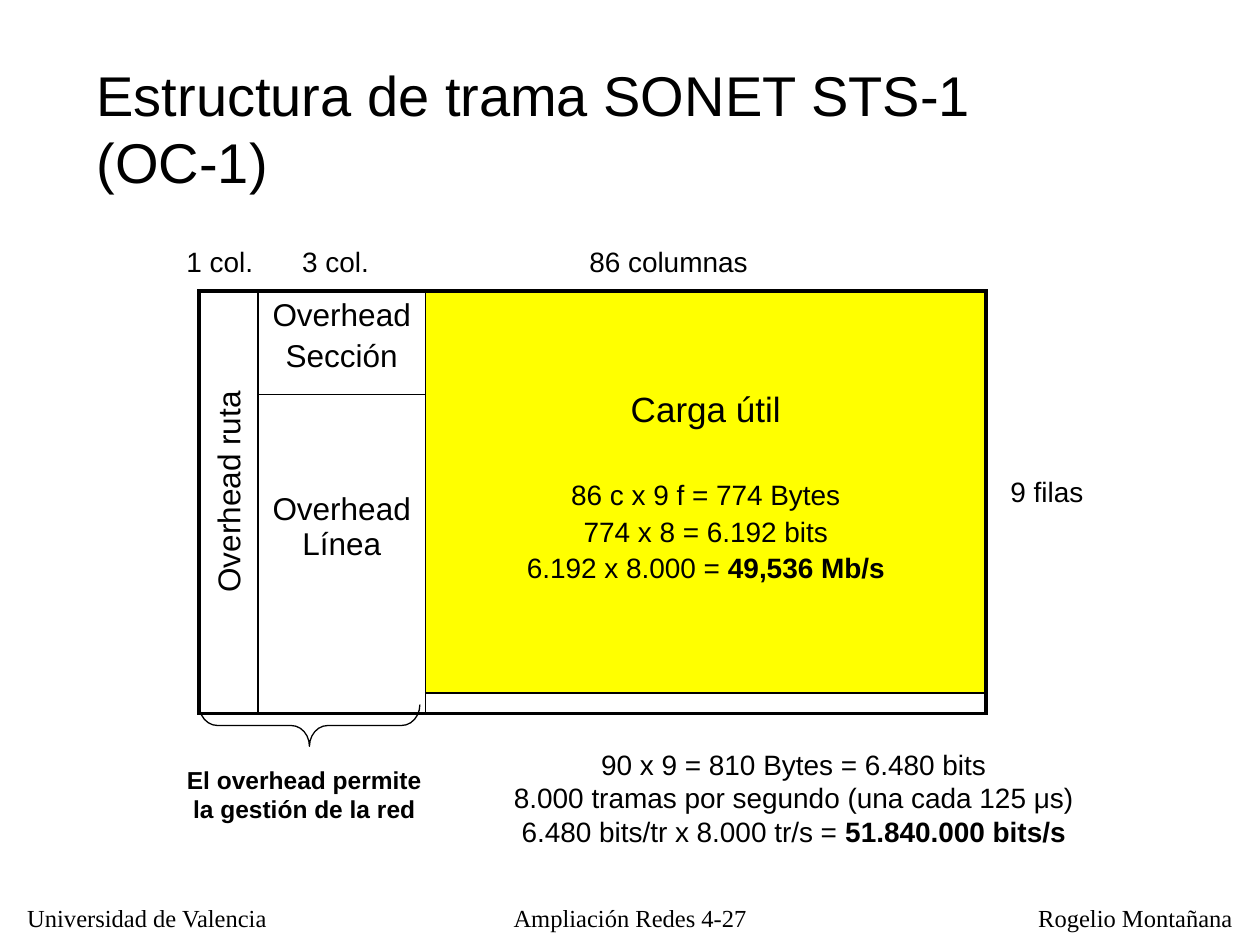
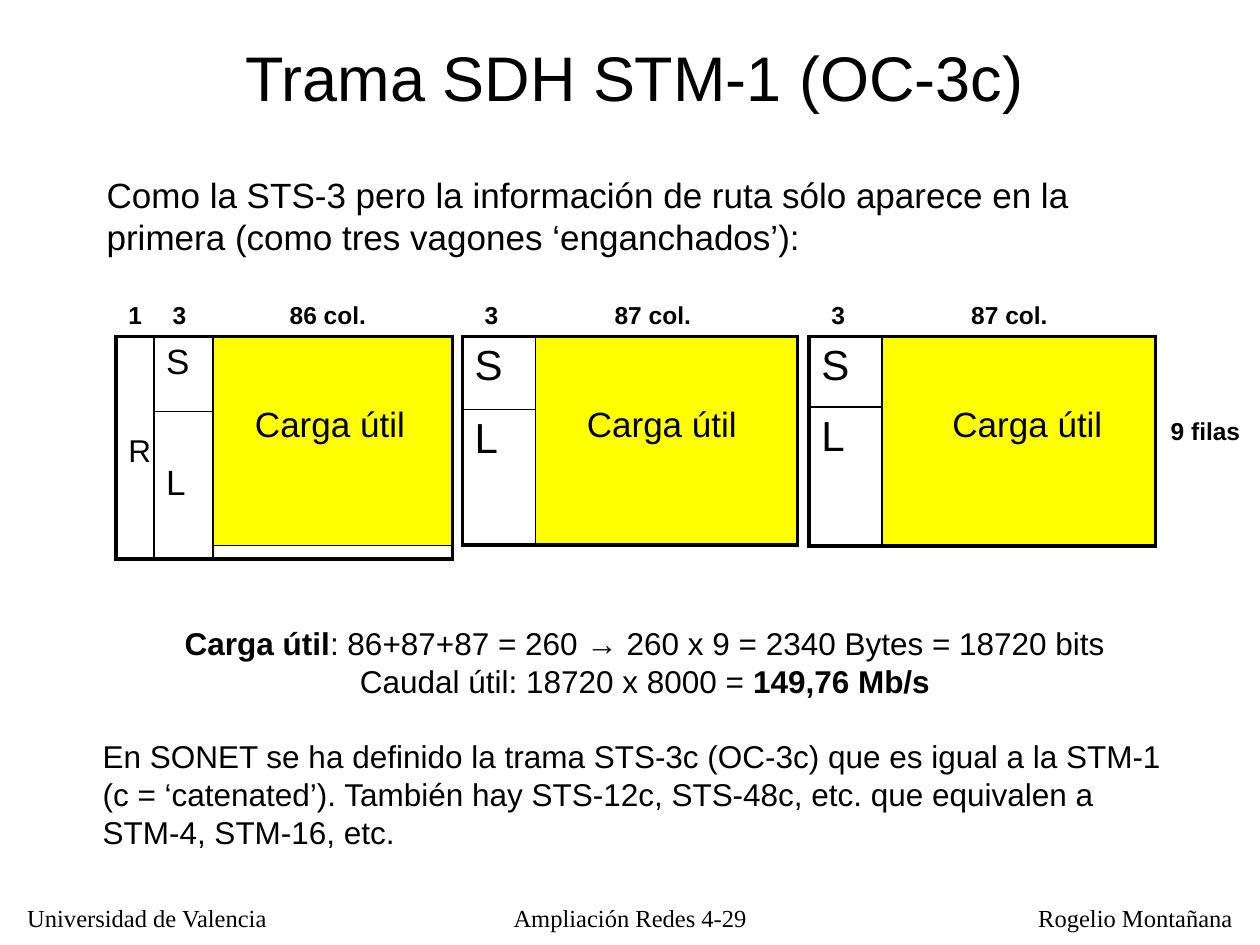
from lxml import etree
from pptx import Presentation
from pptx import util as u
from pptx.dml.color import RGBColor
from pptx.enum import shapes, text
from pptx.oxml import ns

COLORS = {"ink": "000000", "payload": "FFFF00"}
SANS, SERIF = "Arial", "Times New Roman"
THICK, THIN = 2.25, 1
LEFT, CENTER = text.PP_ALIGN.LEFT, text.PP_ALIGN.CENTER


def color(name):
    """Return the named palette colour."""
    return RGBColor.from_string(COLORS[name])


def write(frame, lines, size=16, font=SANS, align=LEFT, bold=False, gaps=None):
    """Fill a text frame; asterisks mark bold words, gaps give space before by line."""
    for index, line in enumerate(lines):
        para = frame.paragraphs[0] if index == 0 else frame.add_paragraph()
        para.alignment = align
        para.space_before = u.Pt((gaps or {}).get(index, 0))
        for part, words in enumerate(line.split("*")):
            if words:
                span = para.add_run()
                span.text = words
                span.font.size = u.Pt(size)
                span.font.name = font
                span.font.bold = bold or part % 2 == 1
                span.font.color.rgb = color("ink")


def add_text(page, box, *lines, wrap=False, turn=0, **style):
    """Add a text box at box (left, top, width, height in cm)."""
    shape = page.shapes.add_textbox(*map(u.Cm, box))
    shape.rotation = turn
    frame = shape.text_frame
    frame.word_wrap = wrap
    frame.auto_size = text.MSO_AUTO_SIZE.SHAPE_TO_FIT_TEXT
    write(frame, lines, **style)


def add_shape(page, kind, box, fill=None):
    """Add a thin-lined preset shape, filled only when a colour is named."""
    shape = page.shapes.add_shape(kind, *map(u.Cm, box))
    shape.shadow.inherit = False
    shape.line.color.rgb = color("ink")
    shape.line.width = u.Pt(0.75)
    if fill:
        shape.fill.solid()
        shape.fill.fore_color.rgb = color(fill)
    else:
        shape.fill.background()
    return shape


def set_borders(cell, widths):
    """Draw the cell's borders from a dict of side to width in points."""
    properties = cell._tc.get_or_add_tcPr()
    for side, width in widths.items():
        line = etree.SubElement(properties, ns.qn(f"a:ln{side}"), w=str(u.Pt(width)))
        fill = etree.SubElement(line, ns.qn("a:solidFill"))
        etree.SubElement(fill, ns.qn("a:srgbClr"), val=COLORS["ink"])


def add_frame_table(page, origin, columns, rows, payload_height, cells):
    """Draw a transmission frame: overhead columns and a yellow payload column."""
    left, top = origin
    payload = (left + sum(columns[:-1]), top, columns[-1], payload_height)
    add_shape(page, shapes.MSO_SHAPE.RECTANGLE, payload, "payload")
    table = page.shapes.add_table(
        len(rows), len(columns), *map(u.Cm, (left, top, sum(columns), sum(rows)))
    ).table
    table.first_row = table.horz_banding = False
    for column, width in zip(table.columns, columns):
        column.width = u.Cm(width)
    for row, height in zip(table.rows, rows):
        row.height = u.Cm(height)
    last = len(columns) - 1
    for index in {last, 0} if len(columns) == 3 else {last}:
        table.cell(0, index).merge(table.cell(1, index))
    for row in range(len(rows)):
        for index in range(len(columns)):
            cell = table.cell(row, index)
            at_bottom = row + cell.span_height >= len(rows)
            widths = {
                "L": THICK if index == 0 else THIN,
                "R": THICK if index == last else THIN,
                "T": THIN if row else THICK,
                "B": THICK if at_bottom else THIN,
            }
            if cell.is_spanned:
                del widths["T"]
            set_borders(cell, widths)
            cell.fill.background()
    for (row, index), (lines, inset, style) in cells.items():
        cell = table.cell(row, index)
        cell.margin_left = u.Cm(inset[0])
        cell.margin_top = u.Cm(inset[1])
        write(cell.text_frame, lines, **style)
    return table


def add_footer(page, number):
    """Write the three footer texts."""
    style = {"size": 14, "font": SERIF}
    add_text(page, (0.3, 18.08, 5.41, 0.84), "Universidad de Valencia", **style)
    add_text(page, (20.68, 18.08, 4.42, 0.84), "Rogelio Montañana", **style)
    add_text(page, (9.91, 18.08, 5.59, 0.79), f"Ampliación Redes 4-{number}",
             wrap=True, align=CENTER, **style)


def add_page(deck, number, title, box, size, wrap=False):
    """Add a blank page with its title and footer."""
    page = deck.slides.add_slide(deck.slide_layouts[6])
    add_text(page, box, title, size=size, wrap=wrap)
    add_footer(page, number)
    return page


def add_sts_frame(page, left, top):
    """Draw the STS-1 frame with its column and row labels."""
    centered = {"size": 18, "align": CENTER}
    table = add_frame_table(
        page, (left, top), (1.19, 3.38, 11.3), (2.08, 6.43), 8.1,
        {
            (0, 1): (("Overhead", "Sección"), (0.25, 0.13), {**centered, "gaps": {1: 3.6}}),
            (1, 1): (("Overhead Línea",), (0.25, 1.96), centered),
            (0, 2): (
                ("Carga útil", "86 c x 9 f = 774 Bytes", "774 x 8 = 6.192 bits",
                 "6.192 x 8.000 = *49,536 Mb/s*"),
                (0.25, 2),
                {"align": CENTER, "gaps": {1: 29, 2: 3.2, 3: 3.2}},
            ),
        },
    )
    heading = table.cell(0, 2).text_frame.paragraphs[0]
    heading.runs[0].font.size = u.Pt(20)
    add_text(page, (left - 1.7, top + 3.53, 4.57, 1.02), "Overhead ruta", size=18, turn=270)
    for offset, width, label in ((-0.5, 2.1, "1 col."), (1.83, 2.1, "3 col."),
                                 (7.62, 3.9, "86 columnas")):
        add_text(page, (left + offset, top - 1.07, width, 0.94), label)
    add_text(page, (left + 16.11, top + 3.58, 2.2, 0.94), "9 filas")


def add_overhead_note(page, left, top):
    """Add the brace under the overhead columns and its caption."""
    brace = add_shape(page, shapes.MSO_SHAPE.LEFT_BRACE, (left + 2.44, top, 0.84, 4.45))
    brace.rotation = 270
    brace.adjustments[0] = 0.44
    brace.adjustments[1] = 0.5
    add_text(page, (left, top + 2.89, 5.51, 1.45), "El overhead permite",
             "la gestión de la red", size=14, bold=True, align=CENTER, wrap=True)


def build_sts_page(deck):
    """Build the page on the SONET STS-1 frame."""
    page = add_page(deck, 27, "Estructura de trama SONET STS-1 (OC-1)",
                    (1.7, 1.09, 21.8, 1.6), 32, wrap=True)
    add_sts_frame(page, 4.01, 5.87)
    add_overhead_note(page, 3.38, 12.4)
    add_text(page, (10.08, 14.94, 11.84, 2.29), "90 x 9 = 810 Bytes = 6.480 bits",
             "8.000 tramas por segundo (una cada 125 μs)",
             "6.480 bits/tr x 8.000 tr/s = *51.840.000 bits/s*", align=CENTER)


def add_wagon(page, origin, columns, rows, payload_inset, labels):
    """Draw one of the chained frames with its column labels."""
    cells = {(0, len(columns) - 1): (("Carga útil",), (payload_inset, 1.4), {"size": 20})}
    if len(columns) == 3:
        cells[0, 0] = (("R",), (0.25, 1.96), {"size": 18})
        cells[0, 1] = (("S",), (0.25, 0.13), {"size": 20})
        cells[1, 1] = (("L",), (0.25, 1.04), {"size": 20})
    else:
        for row, letter in enumerate("SL"):
            cells[row, 0] = ((letter,), (0.25, 0.13), {"size": 24})
    add_frame_table(page, origin, columns, rows, 4.22, cells)
    left, top = origin
    for offset, label in labels:
        width = 0.85 if len(label) == 1 else 2.4
        add_text(page, (left + offset, top - 0.86, width, 0.84), label, size=14, bold=True)


def build_stm_page(deck):
    """Build the page on the SDH STM-1 frame."""
    page = add_page(deck, 29, "Trama SDH STM-1 (OC-3c)", (4.7, 0.66, 16.36, 1.8), 36)
    add_text(page, (1.9, 3.38, 21.16, 1.96),
             "Como la STS-3 pero la información de ruta sólo aparece en la primera "
             "(como tres vagones ‘enganchados’):", size=20, wrap=True)
    wagons = (
        (2.34, (0.76, 1.19, 4.83), (1.52, 2.97), 0.85,
         ((0, "1"), (0.89, "3"), (3.25, "86 col."))),
        (9.32, (1.47, 5.29), (1.47, 2.74), 1.04, ((0.2, "3"), (2.82, "87 col."))),
        (16.31, (1.47, 5.51), (1.42, 2.81), 1.42, ((0.2, "3"), (3.02, "87 col."))),
    )
    for left, *parts in wagons:
        add_wagon(page, (left, 6.78), *parts)
    add_text(page, (23.35, 8.26, 2.05, 0.84), "9 filas", size=14, bold=True)
    add_text(page, (1.8, 12.45, 22.4, 2.0),
             "*Carga útil*: 86+87+87 = 260 → 260 x 9 = 2340 Bytes = 18720 bits",
             "Caudal útil: 18720 x 8000 = *149,76 Mb/s*",
             size=18, align=CENTER, wrap=True)
    add_text(page, (1.82, 14.74, 22.4, 2.55),
             "En SONET se ha definido la trama STS-3c (OC-3c) que es igual a la STM-1 "
             "(c = ‘catenated’). También hay STS-12c, STS-48c, etc. que equivalen a "
             "STM-4, STM-16, etc.", size=18, wrap=True)


def main():
    """Build and save the deck."""
    deck = Presentation()
    deck.slide_width, deck.slide_height = u.Cm(25.4), u.Cm(19.05)
    build_sts_page(deck)
    build_stm_page(deck)
    deck.save("out.pptx")


if __name__ == "__main__":
    main()
